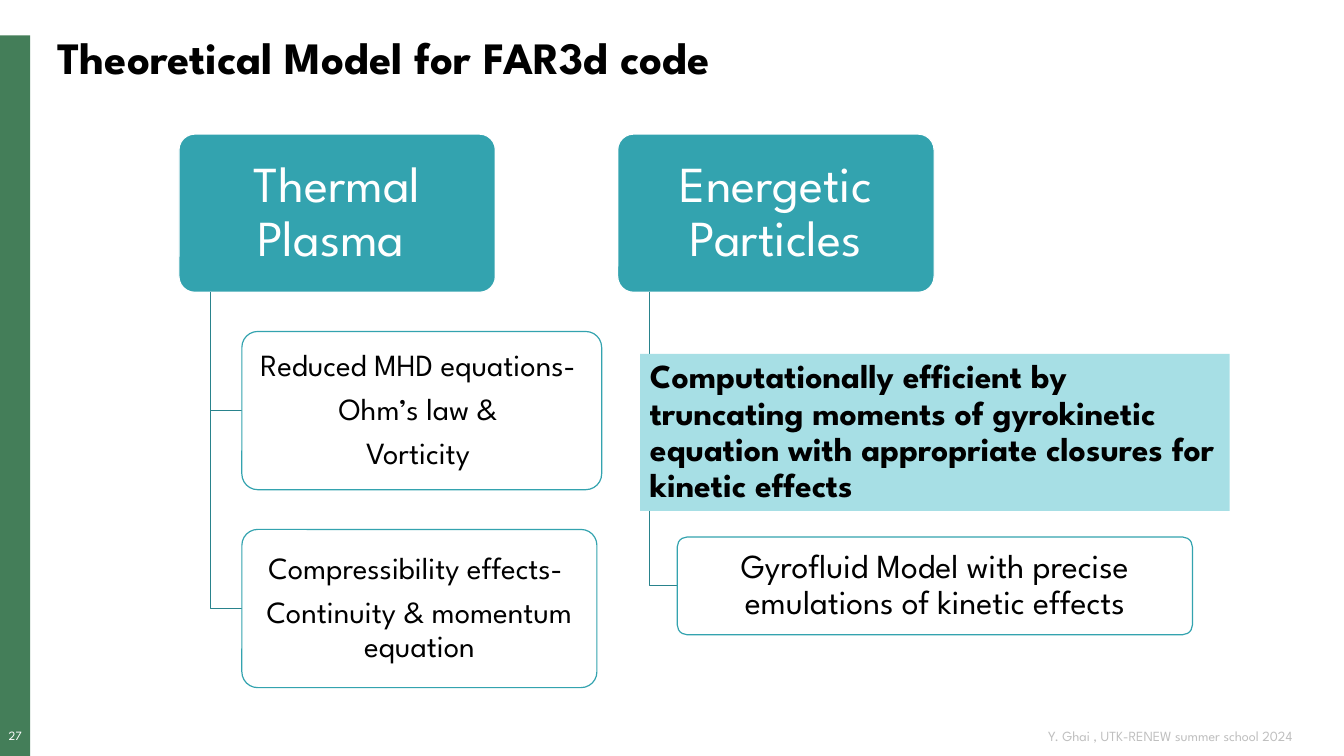
from dataclasses import dataclass

import pptx
import pptx.dml.color
import pptx.enum.shapes
import pptx.enum.text
import pptx.oxml
import pptx.oxml.ns
import pptx.util

Pt = pptx.util.Pt
ALIGN = pptx.enum.text.PP_ALIGN
SHAPE = pptx.enum.shapes.MSO_SHAPE
FONT = "League Spartan"
LINE_WIDTH = 0.85
COLORS = {
    "white": "FFFFFF",
    "black": "000000",
    "gray": "BFBFBF",
    "green": "447E59",
    "teal": "33A3AF",
    "dark_teal": "29838C",
    "pale_teal": "A7DFE5",
}


@dataclass
class Box:
    left: float
    top: float
    width: float
    height: float


@dataclass
class Style:
    size: float
    color: str = "black"
    bold: bool = False
    align: ALIGN = ALIGN.LEFT
    spacing: float = 0.9
    space_after: float = 0  # share of the font size
    insets: tuple[float, float, float, float] = (7.2, 3.6, 7.2, 3.6)


@dataclass
class Node:
    box: Box
    lines: list[str]
    size: float


@dataclass
class Branch:
    head: Node
    children: list[Node]


def rgb(name: str) -> pptx.dml.color.RGBColor:
    return pptx.dml.color.RGBColor.from_string(COLORS[name])


def write(s, lines: list[str], style: Style) -> None:
    tf = s.text_frame
    tf.word_wrap = True
    tf.vertical_anchor = pptx.enum.text.MSO_ANCHOR.MIDDLE
    tf.margin_left, tf.margin_top, tf.margin_right, tf.margin_bottom = map(Pt, style.insets)
    for i, line in enumerate(lines):
        p = tf.paragraphs[0] if i == 0 else tf.add_paragraph()
        p.add_run().text = line
        p.alignment = style.align
        p.line_spacing = style.spacing
        p.space_after = Pt(round(style.space_after * style.size, 1))
        p.font.name = FONT
        p.font.size = Pt(style.size)
        p.font.bold = style.bold
        p.font.color.rgb = rgb(style.color)


def add_text(slide, box: Box, line: str, style: Style) -> None:
    s = slide.shapes.add_textbox(Pt(box.left), Pt(box.top), Pt(box.width), Pt(box.height))
    write(s, [line], style)


def add_block(slide, box: Box, fill: str, line: str = "", shape: SHAPE = SHAPE.RECTANGLE):
    s = slide.shapes.add_shape(shape, Pt(box.left), Pt(box.top), Pt(box.width), Pt(box.height))
    s.shadow.inherit = False
    s.fill.solid()
    s.fill.fore_color.rgb = rgb(fill)
    if line:
        s.line.color.rgb = rgb(line)
        s.line.width = Pt(LINE_WIDTH)
    else:
        s.line.fill.background()
    return s


def add_node(slide, node: Node, fill: str, line: str, style: Style):
    s = add_block(slide, node.box, fill, line, SHAPE.ROUNDED_RECTANGLE)
    s.adjustments[0] = 0.1
    write(s, node.lines, style)
    return s


def add_elbow(slide, head: Box, child: Box) -> None:
    x = head.left + 0.1 * head.width
    y = child.top + child.height / 2
    fb = slide.shapes.build_freeform(Pt(x), Pt(head.top + head.height))
    fb.add_line_segments([(Pt(x), Pt(y)), (Pt(child.left), Pt(y))], close=False)
    s = fb.convert_to_shape()
    s.shadow.inherit = False
    s.fill.background()
    s.line.color.rgb = rgb("dark_teal")
    s.line.width = Pt(LINE_WIDTH)


def add_branch(slide, branch: Branch) -> None:
    head_style = Style(branch.head.size, "white", align=ALIGN.CENTER, space_after=0.35,
                       insets=(5.4, 3.6, 5.4, 3.6))
    add_node(slide, branch.head, "teal", "white", head_style)
    for child in branch.children:
        add_elbow(slide, branch.head.box, child.box)
        child_style = Style(child.size, align=ALIGN.CENTER, space_after=0.35,
                            insets=(3.6, 2.4, 3.6, 2.4))
        s = add_node(slide, child, "white", "teal", child_style)
        color = s.fill._xPr.find(".//" + pptx.oxml.ns.qn("a:srgbClr"))
        color.append(pptx.oxml.parse_xml(
            f'<a:alpha {pptx.oxml.ns.nsdecls("a")} val="90000"/>'))


BRANCHES = [
    Branch(
        Node(Box(127.8, 95.8, 226, 113), ["Thermal Plasma "], 36),
        [
            Node(Box(172.8, 236.8, 257, 113),
                 ["Reduced MHD equations- ", "Ohm’s law & ", "Vorticity "], 22),
            Node(Box(172.8, 378.2, 253.6, 113),
                 ["Compressibility effects- ", "Continuity & momentum equation"], 22),
        ],
    ),
    Branch(
        Node(Box(441.2, 95.8, 226, 113), ["Energetic Particles"], 36),
        [
            Node(Box(483.8, 383.6, 368, 69.8),
                 ["Gyrofluid Model with precise emulations of kinetic effects"], 24),
        ],
    ),
]


def main() -> None:
    prs = pptx.Presentation()
    prs.slide_width, prs.slide_height = Pt(960), Pt(540)
    slide = prs.slides.add_slide(prs.slide_layouts[6])

    # Side bar, slide number and footer
    add_block(slide, Box(0, 25.2, 21.6, 514.8), "green")
    add_text(slide, Box(0, 520, 22, 12.2), "27",
             Style(9, "white", align=ALIGN.CENTER, insets=(0, 0, 0, 0)))
    add_text(slide, Box(630.7, 518.4, 303.8, 14.4), "Y. Ghai , UTK-RENEW summer school 2024",
             Style(10, "gray", align=ALIGN.RIGHT, spacing=1, insets=(7.2, 3.6, 11.5, 3.6)))

    # Hierarchy of models
    for branch in BRANCHES:
        add_branch(slide, branch)

    # Highlighted statement
    s = add_block(slide, Box(457.2, 252.7, 421.2, 112.3), "pale_teal")
    write(s, ["Computationally efficient by truncating moments of gyrokinetic equation "
              "with appropriate closures for kinetic effects"], Style(24, bold=True))

    # Title
    add_text(slide, Box(33.8, 21.6, 900, 42.5), "Theoretical Model for FAR3d code",
             Style(32, bold=True))

    prs.save("out.pptx")


if __name__ == "__main__":
    main()
